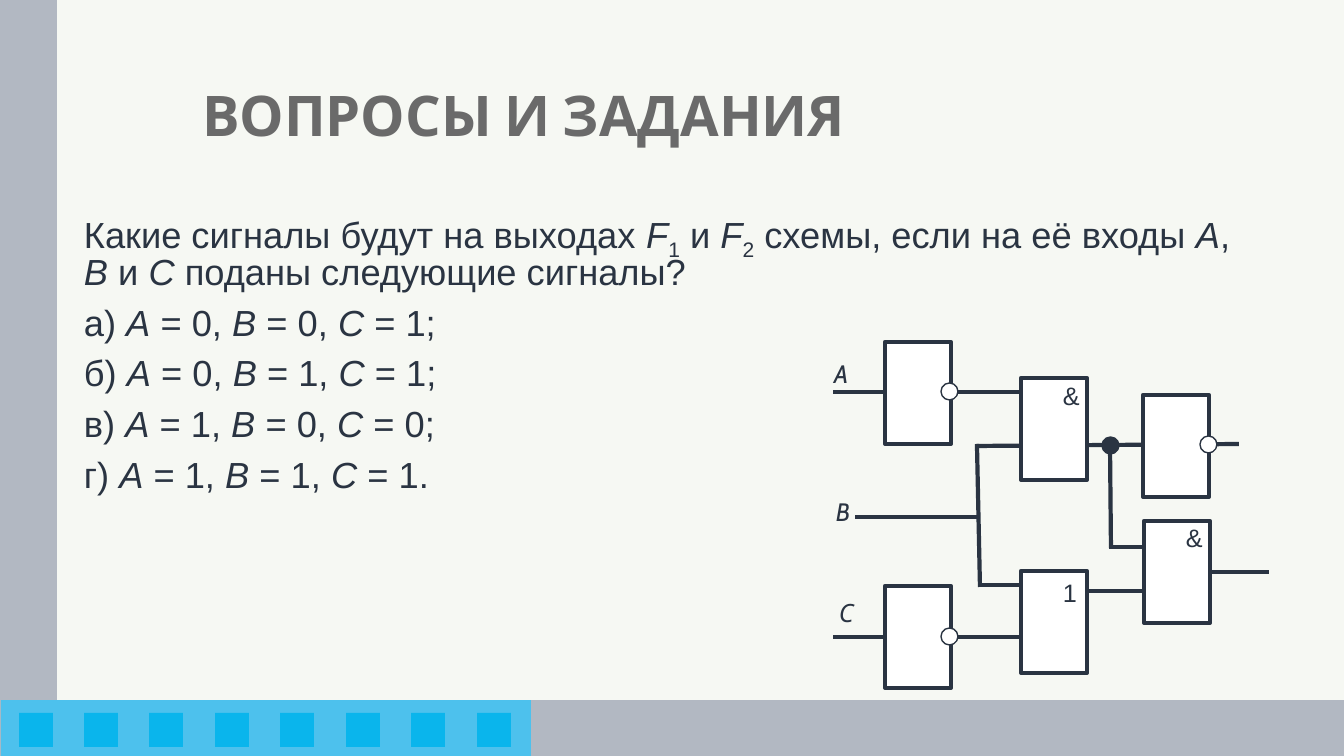
from lxml import etree
from pptx import Presentation
from pptx.dml.color import RGBColor
from pptx.enum.shapes import MSO_CONNECTOR, MSO_SHAPE
from pptx.enum.text import MSO_ANCHOR, MSO_AUTO_SIZE, PP_ALIGN
from pptx.oxml.ns import qn
from pptx.util import Emu, Pt

RECT, OVAL = MSO_SHAPE.RECTANGLE, MSO_SHAPE.OVAL
STRAIGHT = MSO_CONNECTOR.STRAIGHT
TOP, MIDDLE = MSO_ANCHOR.TOP, MSO_ANCHOR.MIDDLE
FIXED, LEFT = MSO_AUTO_SIZE.NONE, PP_ALIGN.LEFT
RIGHT_SIDE = 3
EMU_PER_PX = 914400 / 100.8

INK, PAPER, WHITE, TITLE_GREY = "2A3442", "F6F8F3", "FFFFFF", "6A6A6A"
FRAME_GREY, BAND_BLUE, TILE_BLUE = "B2B8C2", "4DC1ED", "0AB5EC"


def px(length):
    """Turn pixels into EMU."""
    return Emu(round(length * EMU_PER_PX))


def colour(hex_code):
    """Turn a hex string into a colour."""
    return RGBColor.from_string(hex_code)


class CircuitSlide:
    """Hold the style and the current slide."""

    def __init__(self, deck):
        """Add a title-only slide with a plain background."""
        self.slide = deck.slides.add_slide(deck.slide_layouts[5])
        self.shapes = self.slide.shapes
        fill = self.slide.background.fill
        fill.solid()
        fill.fore_color.rgb = colour(PAPER)

    def shape(self, kind, left, top, width, height, fill, line_width=0):
        """Add a filled preset shape, outlined when a line width is given."""
        shape = self.shapes.add_shape(kind, px(left), px(top), px(width), px(height))
        shape.shadow.inherit = False
        shape.fill.solid()
        shape.fill.fore_color.rgb = colour(fill)
        if line_width:
            shape.line.color.rgb = colour(INK)
            shape.line.width = Pt(line_width)
        else:
            shape.line.fill.background()
        return shape

    def gate(self, left, top):
        """Add the box of a logic gate."""
        return self.shape(RECT, left, top, 66, 102, WHITE, 3)

    def dot(self, left, top, fill=WHITE):
        """Add an inversion circle or a junction."""
        self.shape(OVAL, left, top, 17, 17, fill, 1)

    def wire(self, x1, y1, x2, y2, source=None):
        """Add a wire, joined to the right side of its source gate if any."""
        wire = self.shapes.add_connector(STRAIGHT, px(x1), px(y1), px(x2), px(y2))
        wire.line.color.rgb = colour(INK)
        wire.line.width = Pt(3)
        etree.SubElement(wire._element.spPr, qn("a:effectLst"))
        if source is not None:
            wire.begin_connect(source, RIGHT_SIDE)

    def run(self, paragraph, text, size, font="Arial", hex_code=INK, style=""):
        """Add one run; the style is empty, bold, italic or sub."""
        run = paragraph.add_run()
        run.text = text
        run.font.name, run.font.size = font, Pt(size)
        run.font.color.rgb = colour(hex_code)
        run.font.bold = style == "bold"
        run.font.italic = style == "italic"
        if style == "sub":
            run._r.get_or_add_rPr().set("baseline", "-25000")

    def title(self, text, left, top, width, height):
        """Place and format the title placeholder."""
        title = self.shapes.title
        title.left, title.top = px(left), px(top)
        title.width, title.height = px(width), px(height)
        frame = title.text_frame
        frame.word_wrap, frame.auto_size = True, FIXED
        frame.vertical_anchor = MIDDLE
        paragraph = frame.paragraphs[0]
        paragraph.alignment, paragraph.line_spacing = LEFT, 0.9
        self.run(paragraph, text, 40, "Cabin", TITLE_GREY, "bold")

    def text_frame(self, left, top, width, height):
        """Add a wrapping text box and return its frame."""
        box = self.shapes.add_textbox(px(left), px(top), px(width), px(height))
        frame = box.text_frame
        frame.word_wrap, frame.auto_size = True, FIXED
        frame.vertical_anchor = TOP
        return frame

    def body(self, paragraphs, left, top, width, height):
        """Add the question and its variants."""
        frame = self.text_frame(left, top, width, height)
        for index, runs in enumerate(paragraphs):
            paragraph = frame.add_paragraph() if index else frame.paragraphs[0]
            paragraph.line_spacing, paragraph.space_before = 0.84, Pt(10)
            for text, style in runs:
                self.run(paragraph, text, 25.9, style=style)

    def label(self, text, left, top, font="Arial", style=""):
        """Add a sign inside a gate or a letter at an input."""
        frame = self.text_frame(left, top, 30, 40)
        self.run(frame.paragraphs[0], text, 18, font, style=style)


def main():
    """Build the slide and save it."""
    deck = Presentation()
    deck.slide_width, deck.slide_height = px(1344), px(756)
    page = CircuitSlide(deck)

    page.shape(RECT, 0, 0, 57, 756, FRAME_GREY)
    page.shape(RECT, 0, 700, 1344, 56, FRAME_GREY)
    page.shape(RECT, 1, 700, 530, 56, BAND_BLUE)
    for index in range(8):
        page.shape(RECT, 19 + index * 458 // 7, 713, 34, 34, TILE_BLUE)

    page.title("ВОПРОСЫ И ЗАДАНИЯ", 192, 45, 1079, 146)
    question = [
        ("Какие сигналы будут на выходах ", ""), ("F", "italic"), ("1", "sub"),
        (" и ", ""), ("F", "italic"), ("2", "sub"),
        (" схемы, если на её входы ", ""), ("А", "italic"), (", ", ""),
        ("В ", "italic"), ("и ", ""), ("С ", "italic"),
        ("поданы следующие сигналы?", ""),
    ]
    variants = [
        [(f"{letter}) ", ""), ("А ", "italic"), (f"= {a}, ", ""),
         ("В ", "italic"), (f"= {b}, ", ""), ("С ", "italic"), (f"= {c}{end}", "")]
        for letter, a, b, c, end in (
            ("а", 0, 0, 1, ";"), ("б", 0, 1, 1, ";"),
            ("в", 1, 0, 0, ";"), ("г", 1, 1, 1, "."))
    ]
    page.body([question, *variants], 74, 210, 1198, 297)

    for ends in ((1239, 444, 976, 446), (1021, 637, 833, 637), (1021, 392, 833, 392)):
        page.wire(*ends)
    for corner in ((885, 342), (885, 586), (1021, 378), (1021, 571), (1143, 395)):
        page.gate(*corner)
    output_and = page.gate(1144, 521)

    branch_wires = (
        (980, 587, 977, 444), (979, 517, 855, 517), (1021, 585, 979, 585),
        (1145, 591, 1085, 591), (1111, 548, 1110, 443), (1145, 547, 1109, 547))
    for ends in branch_wires:
        page.wire(*ends)
    page.wire(1210, 572, 1269, 572, output_and)

    for corner in ((941, 383), (941, 628), (1200, 436)):
        page.dot(*corner)
    page.dot(1102, 437, INK)

    for letter, left, top in (("A", 824, 353), ("B", 826, 491), ("С", 829, 592)):
        page.label(letter, left, top, "Cabin", "italic")
    for sign, left, top in (("&", 1053, 375), ("1", 1053, 572), ("&", 1176, 517)):
        page.label(sign, left, top)

    deck.save("out.pptx")


if __name__ == "__main__":
    main()
